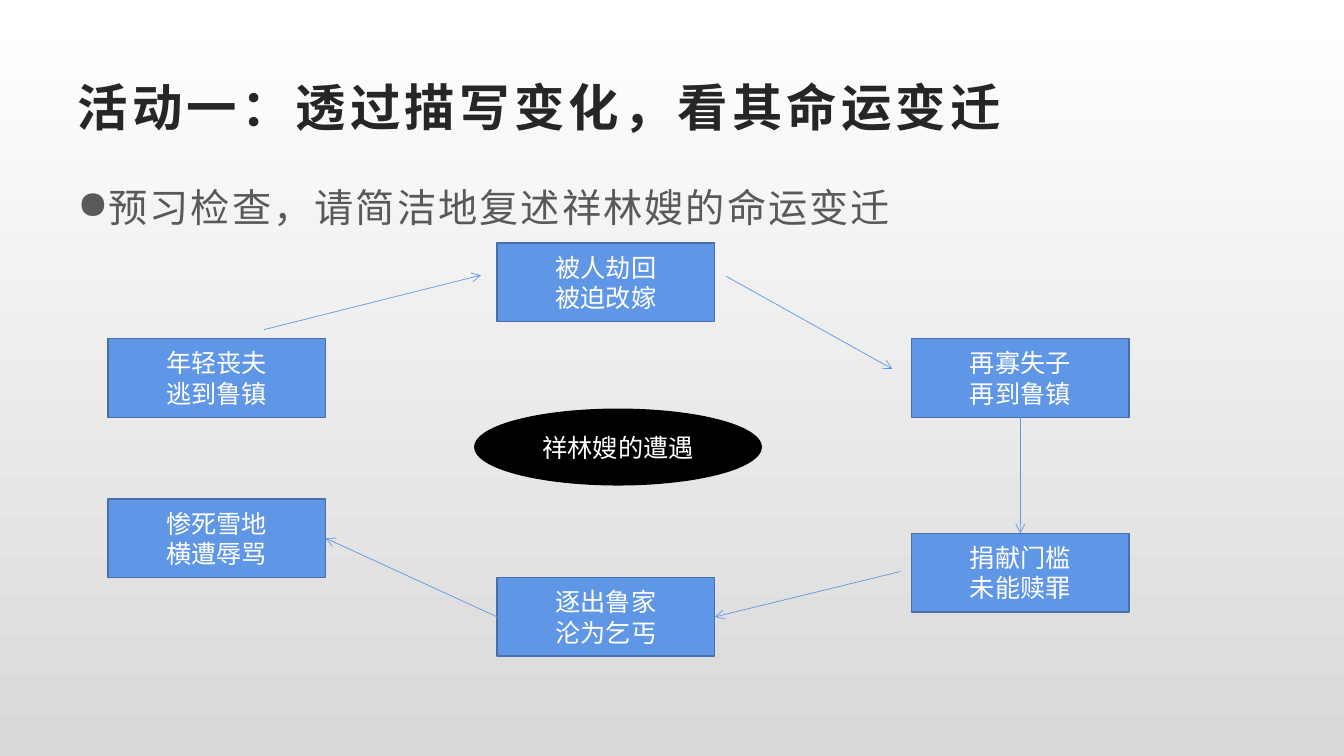
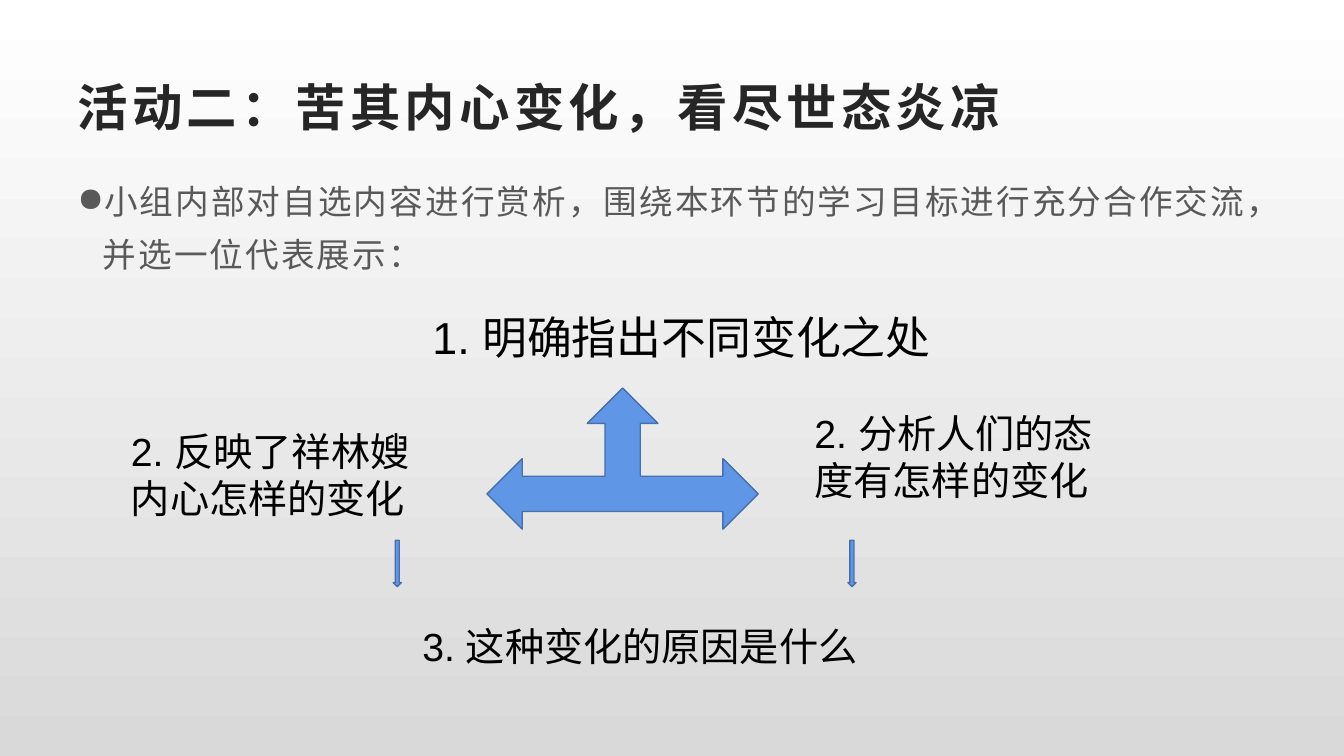
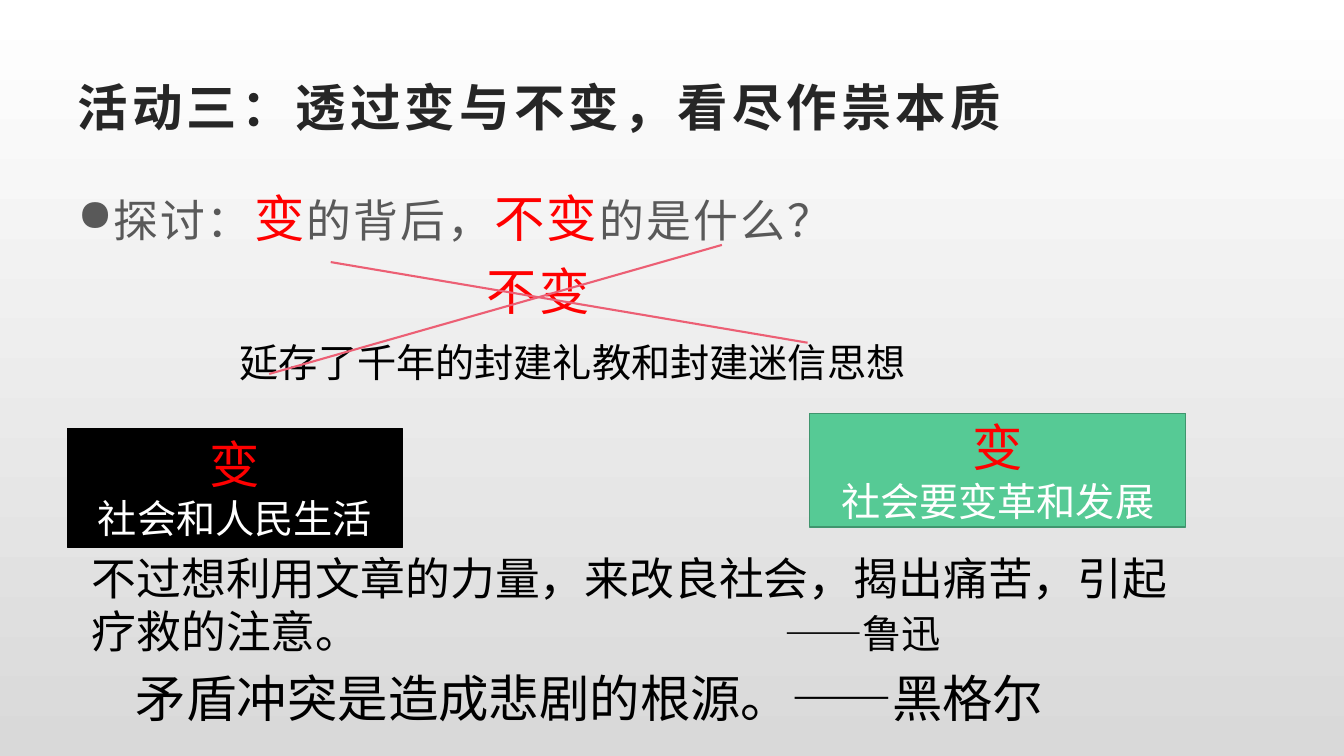
"""Build three class activity slides: a fate cycle, a discussion map and a debate."""
from lxml.etree import SubElement
from pptx import Presentation
from pptx.dml.color import RGBColor
from pptx.enum.shapes import MSO_CONNECTOR as LINE, MSO_SHAPE as SHAPE
from pptx.enum.text import MSO_ANCHOR as ANCHOR, MSO_AUTO_SIZE as AUTO, PP_ALIGN as ALIGN
from pptx.oxml.ns import qn
from pptx.util import Inches, Pt

FONT = "Arial"
COLORS = {
    "top": "FFFFFF", "base": "D9D9D9", "title": "262626", "body": "595959",
    "black": "000000", "white": "FFFFFF", "red": "FF0000", "blue": "6096E6",
    "navy": "476FAA", "green": "56CA95", "moss": "40956E", "rose": "EC5F74",
}

HEADS = [
    ("活动一：透过描写变化，看其命运变迁",
     [("预习检查，请简洁地复述祥林嫂的命运变迁", 28, "body", 1.5)]),
    ("活动二：苦其内心变化，看尽世态炎凉",
     [("小组内部对自选内容进行赏析，围绕本环节的学习目标进行充分合作交流，并选一位代表展示：",
       24, "body", 1.5)]),
    ("活动三：透过变与不变，看尽作祟本质",
     [("探讨：", 32, "body", 1.5), ("变", 36, "red", 1.5), ("的背后，", 32, "body", 1.5),
      ("不变", 36, "red", 1.5), ("的是什么？", 32, "body", 1.5)]),
]

STEP = (2.16, 0.78)
FATES = [
    (1.07, 3.36, ("年轻丧夫", "逃到鲁镇")),
    (4.93, 2.41, ("被人劫回", "被迫改嫁")),
    (9.04, 3.36, ("再寡失子", "再到鲁镇")),
    (9.04, 5.29, ("捐献门槛", "未能赎罪")),
    (4.93, 5.73, ("逐出鲁家", "沦为乞丐")),
    (1.07, 4.95, ("惨死雪地", "横遭辱骂")),
]
HUB = ((4.71, 4.06, 2.84, 0.75), "祥林嫂的遭遇")
LINKS = [
    {"start": (2.62, 3.27), "end": (4.77, 2.73)},
    {"start": (7.2, 2.74), "end": (8.85, 3.66)},
    {"begin": (2, 2), "finish": (3, 0)},
    {"start": (8.93, 5.67), "finish": (4, 3)},
    {"begin": (4, 1), "finish": (5, 3)},
]

TASKS = [
    ((4.19, 3.02, 5.51, 0.64), "1. 明确指出不同变化之处", 32),
    ((7.98, 4.01, 3.26, 1.04), "2. 分析人们的态度有怎样的变化", 28),
    ((1.2, 4.19, 2.99, 1.04), "2. 反映了祥林嫂内心怎样的变化", 28),
    ((4.09, 6.12, 5.61, 0.57), "3. 这种变化的原因是什么", 28),
]
ARROWS = [
    (SHAPE.LEFT_RIGHT_UP_ARROW, (4.83, 3.85, 2.69, 1.4)),
    (SHAPE.DOWN_ARROW, (3.9, 5.36, 0.08, 0.46)),
    (SHAPE.DOWN_ARROW, (8.41, 5.36, 0.08, 0.46)),
]

NOTES = [
    ((4.73, 2.53, 2.69, 0.71), [("不变", 36, "red", 1.5)]),
    ((2.28, 3.31, 7.59, 0.57), [("延存了千年的封建礼教和封建迷信思想", 28, "black")]),
    ((1.25, 6.57, 10.51, 0.71), [("矛盾冲突是造成悲剧的根源。——黑格尔", 36, "black")]),
]
QUOTE = ((0.81, 5.41, 11.22, 1.18),
         [("不过想利用文章的力量，来改良社会，揭出痛苦，引起疗救的注意。", 32, "black"),
          ("\t——鲁迅", 28, "black")])
QUOTE_TAB = 6.87
SIDES = [
    ((0.67, 4.25, 3.32, 1.18), "black", "black", ANCHOR.TOP, "社会和人民生活"),
    ((8.03, 4.1, 3.73, 1.13), "green", "moss", ANCHOR.MIDDLE, "社会要变革和发展"),
]
CROSS = [((7.16, 2.43), (2.67, 3.71)), ((3.28, 2.6), (8.01, 3.4))]


def rgb(name):
    return RGBColor.from_string(COLORS[name])


def inch(nums):
    return [Inches(n) for n in nums]


def style(font, size, color, gap=0, bold=False):
    font.name, font.size, font.bold = FONT, Pt(size), bold
    font.color.rgb = rgb(color)
    font._element.set("spc", str(int(gap * 100)))


def write(frame, paras, align=ALIGN.LEFT, anchor=ANCHOR.TOP):
    frame.word_wrap, frame.auto_size = True, AUTO.NONE
    frame.vertical_anchor = anchor
    for i, runs in enumerate(paras):
        para = frame.add_paragraph() if i else frame.paragraphs[0]
        para.alignment = align
        if len(runs) == 1:
            style(para.font, *runs[0][1:])
        for text, *look in runs:
            run = para.add_run()
            run.text = text
            if len(runs) > 1:
                style(run.font, *look)


def add_text(slide, area, runs):
    box = slide.shapes.add_textbox(*inch(area))
    write(box.text_frame, [runs])
    return box.text_frame.paragraphs[0]


def add_form(slide, kind, area, fill, edge, paras=(), anchor=ANCHOR.MIDDLE):
    form = slide.shapes.add_shape(kind, *inch(area))
    form.shadow.inherit = False
    form.fill.solid()
    form.fill.fore_color.rgb = rgb(fill)
    form.line.color.rgb = rgb(edge)
    form.line.width = Pt(1)
    write(form.text_frame, paras, ALIGN.CENTER, anchor)
    return form


def add_line(slide, start, end, color, width):
    line = slide.shapes.add_connector(LINE.STRAIGHT, *inch(start + end))
    line.line.color.rgb = rgb(color)
    line.line.width = Pt(width)
    SubElement(line._element.spPr, qn("a:effectLst"))
    return line


def add_page(deck, head, lead):
    slide = deck.slides.add_slide(deck.slide_layouts[5])
    title = slide.shapes.title
    title.left, title.top, title.width, title.height = inch((0.67, 0.67, 12, 0.77))
    write(title.text_frame, [[(head, 36, "title", 3, True)]], anchor=ANCHOR.MIDDLE)
    para = add_text(slide, (0.67, 1.63, 12, 1.05), lead)
    para.line_spacing, para.space_after = 1.3, Pt(10)
    props = para._p.get_or_add_pPr()
    props.set("marL", str(Inches(0.25)))
    props.set("indent", str(Inches(-0.25)))
    mark = SubElement(props, qn("a:buChar"), char="●")
    rest = props.find(qn("a:defRPr"))
    if rest is not None:
        rest.addprevious(mark)
    return slide


def draw_fates(slide):
    area, name = HUB
    add_form(slide, SHAPE.OVAL, area, "black", "black", [[(name, 18, "white")]])
    boxes = [add_form(slide, SHAPE.RECTANGLE, (x, y) + STEP, "blue", "navy",
                      [[(text, 18, "white")] for text in texts])
             for x, y, texts in FATES]
    for link in LINKS:
        line = add_line(slide, link.get("start", (0, 0)), link.get("end", (0, 0)), "blue", 0.5)
        if "begin" in link:
            box, side = link["begin"]
            line.begin_connect(boxes[box], side)
        if "finish" in link:
            box, side = link["finish"]
            line.end_connect(boxes[box], side)
        SubElement(line.line._get_or_add_ln(), qn("a:tailEnd"), type="arrow")


def draw_tasks(slide):
    for area, text, size in TASKS:
        add_text(slide, area, [(text, size, "black")])
    for kind, area in ARROWS:
        add_form(slide, kind, area, "blue", "navy")


def draw_debate(slide):
    for area, runs in NOTES:
        add_text(slide, area, runs)
    for area, fill, edge, anchor, text in SIDES:
        add_form(slide, SHAPE.RECTANGLE, area, fill, edge,
                 [[("变", 36, "red", 1.5)], [(text, 28, "white")]], anchor)
    para = add_text(slide, *QUOTE)
    tabs = SubElement(para._p.get_or_add_pPr(), qn("a:tabLst"))
    SubElement(tabs, qn("a:tab"), pos=str(Inches(QUOTE_TAB)), algn="l")
    for start, end in CROSS:
        add_line(slide, start, end, "rose", 1.5)


def main():
    deck = Presentation()
    deck.slide_width, deck.slide_height = inch((13.33, 7.5))
    back = deck.slide_master.background.fill
    back.gradient()
    back.gradient_angle = 270
    for stop, name in zip(back.gradient_stops, ("top", "base")):
        stop.color.rgb = rgb(name)
    for stop, spot in zip(back.gradient_stops, (0, 1)):
        stop.position = spot
    for (head, lead), draw in zip(HEADS, (draw_fates, draw_tasks, draw_debate)):
        draw(add_page(deck, head, lead))
    deck.save("out.pptx")


if __name__ == "__main__":
    main()
